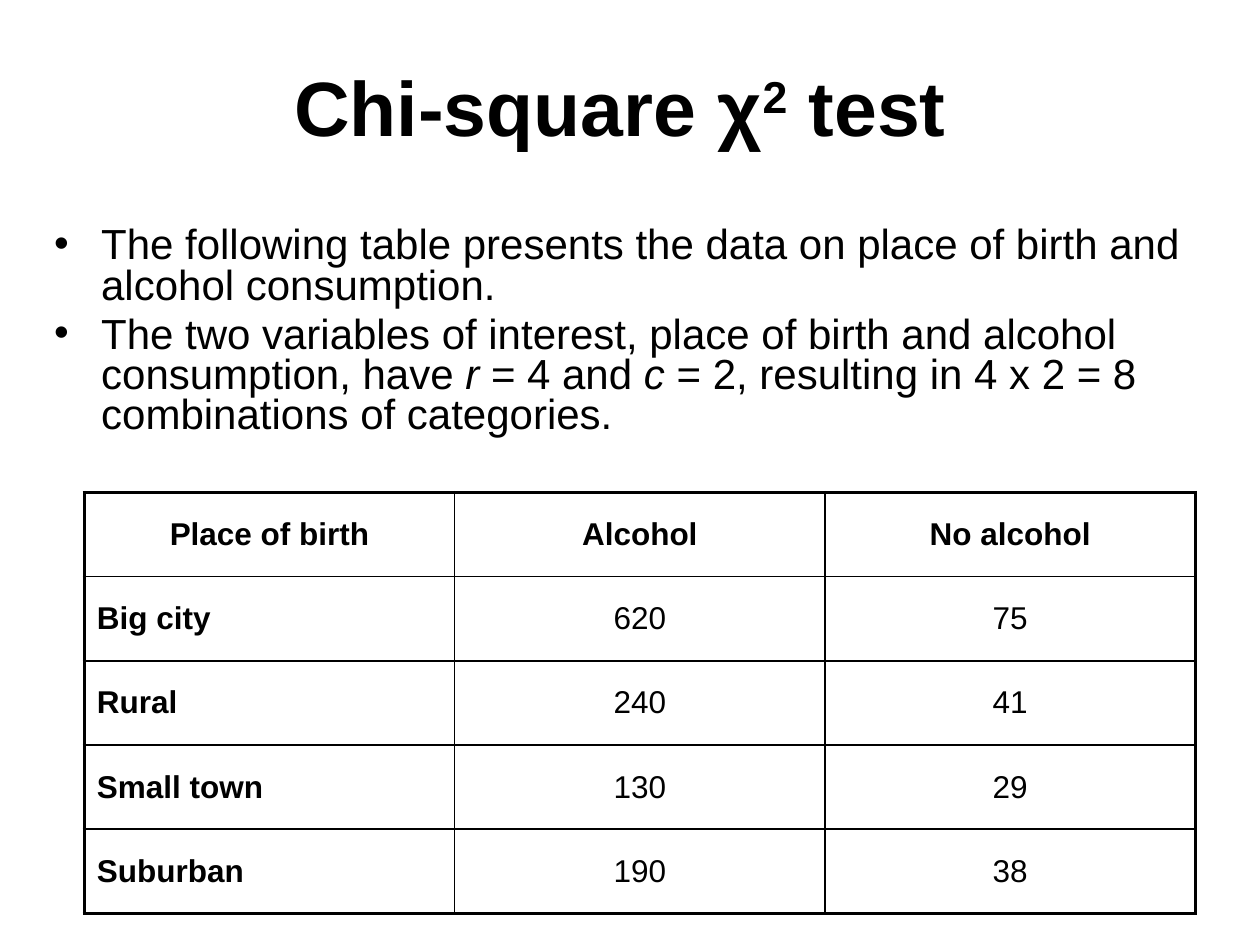
import dataclasses

import pptx
import pptx.dml.color
import pptx.enum.text
import pptx.oxml.ns
import pptx.util
from lxml import etree

Cm, Pt = pptx.util.Cm, pptx.util.Pt
ALIGN = pptx.enum.text.PP_ALIGN
ANCHOR = pptx.enum.text.MSO_ANCHOR


@dataclasses.dataclass(frozen=True)
class Theme:
    font: str = "Arial"
    ink: str = "000000"
    title_size: float = 44
    body_size: float = 24
    table_size: float = 18
    thick: float = 2.25
    thin: float = 1


TITLE = [("Chi-square χ", {}), ("2", {"superscript": True}), (" test", {})]
BULLETS = [
    [("The following table presents the data on place of birth and alcohol consumption.", {})],
    [
        ("The two variables of interest, place of birth and alcohol consumption, have ", {}),
        ("r ", {"italic": True}),
        ("= 4 and ", {}),
        ("c ", {"italic": True}),
        ("= 2, resulting in 4 x 2 = 8 combinations of categories.", {}),
    ],
]
ROWS = [
    ("Place of birth", "Alcohol", "No alcohol"),
    ("Big city", "620", "75"),
    ("Rural", "240", "41"),
    ("Small town", "130", "29"),
    ("Suburban", "190", "38"),
]


def set_all(obj, values):
    for name, value in values.items():
        setattr(obj, name, value)


def add_xml(parent, tag, **attrs):
    child = etree.SubElement(parent, pptx.oxml.ns.qn(tag))
    for name, value in attrs.items():
        child.set(name, str(value))
    return child


class SlideBuilder:
    def __init__(self, prs, theme):
        self.theme = theme
        self.s = prs.slides.add_slide(prs.slide_layouts[6])

    def add_runs(self, p, runs, size, bold=False):
        for text, style in runs:
            r = p.add_run()
            r.text = text
            set_all(r.font, {
                "name": self.theme.font,
                "size": Pt(size),
                "bold": bold,
                "italic": style.get("italic", False),
            })
            r.font.color.rgb = pptx.dml.color.RGBColor.from_string(self.theme.ink)
            if style.get("superscript"):
                r.font._element.set("baseline", "30000")

    def text_frame(self, box, **values):
        sp = self.s.shapes.add_textbox(*map(Cm, box))
        set_all(sp.text_frame, {"word_wrap": True, **values})
        return sp.text_frame

    def title(self, runs, box):
        tf = self.text_frame(box, vertical_anchor=ANCHOR.MIDDLE)
        p = tf.paragraphs[0]
        p.alignment = ALIGN.CENTER
        self.add_runs(p, runs, self.theme.title_size, bold=True)

    def bullets(self, items, box):
        tf = self.text_frame(box, margin_top=Cm(0.6))
        for i, runs in enumerate(items):
            p = tf.add_paragraph() if i else tf.paragraphs[0]
            set_all(p, {"line_spacing": 0.8, "space_before": Pt(5 if i else 0)})
            indent = Cm(0.95)
            pPr = p._p.get_or_add_pPr()
            pPr.set("marL", str(indent))
            pPr.set("indent", str(-indent))
            add_xml(pPr, "a:buFont", typeface=self.theme.font)
            add_xml(pPr, "a:buChar", char="•")
            self.add_runs(p, runs, self.theme.body_size)

    def borders(self, cell, outer):
        """Rule all four sides, thick where the side lies on the table's edge."""
        tcPr = cell._tc.get_or_add_tcPr()
        for side in "LRTB":
            width = self.theme.thick if side in outer else self.theme.thin
            ln = add_xml(tcPr, "a:ln" + side, w=Pt(width))
            add_xml(add_xml(ln, "a:solidFill"), "a:srgbClr", val=self.theme.ink)

    def table(self, rows, box):
        last_row, last_col = len(rows) - 1, len(rows[0]) - 1
        frame = self.s.shapes.add_table(last_row + 1, last_col + 1, *map(Cm, box))
        for i, row in enumerate(rows):
            for j, text in enumerate(row):
                cell = frame.table.cell(i, j)
                edges = {"L": j == 0, "R": j == last_col, "T": i == 0, "B": i == last_row}
                self.borders(cell, [side for side, outer in edges.items() if outer])
                cell.fill.background()
                cell.vertical_anchor = ANCHOR.MIDDLE
                p = cell.text_frame.paragraphs[0]
                p.alignment = ALIGN.LEFT if i and not j else ALIGN.CENTER
                self.add_runs(p, [(text, {})], self.theme.table_size, bold=not (i and j))


def main():
    prs = pptx.Presentation()
    set_all(prs, {"slide_width": Cm(25.4), "slide_height": Cm(19.05)})
    slide = SlideBuilder(prs, Theme())
    slide.bullets(BULLETS, (0.84, 3.99, 24.13, 6.32))
    slide.table(ROWS, (1.7, 9.93, 22.4, 8.48))
    slide.title(TITLE, (1.07, 1.07, 22.86, 2.11))
    prs.save("out.pptx")


if __name__ == "__main__":
    main()
